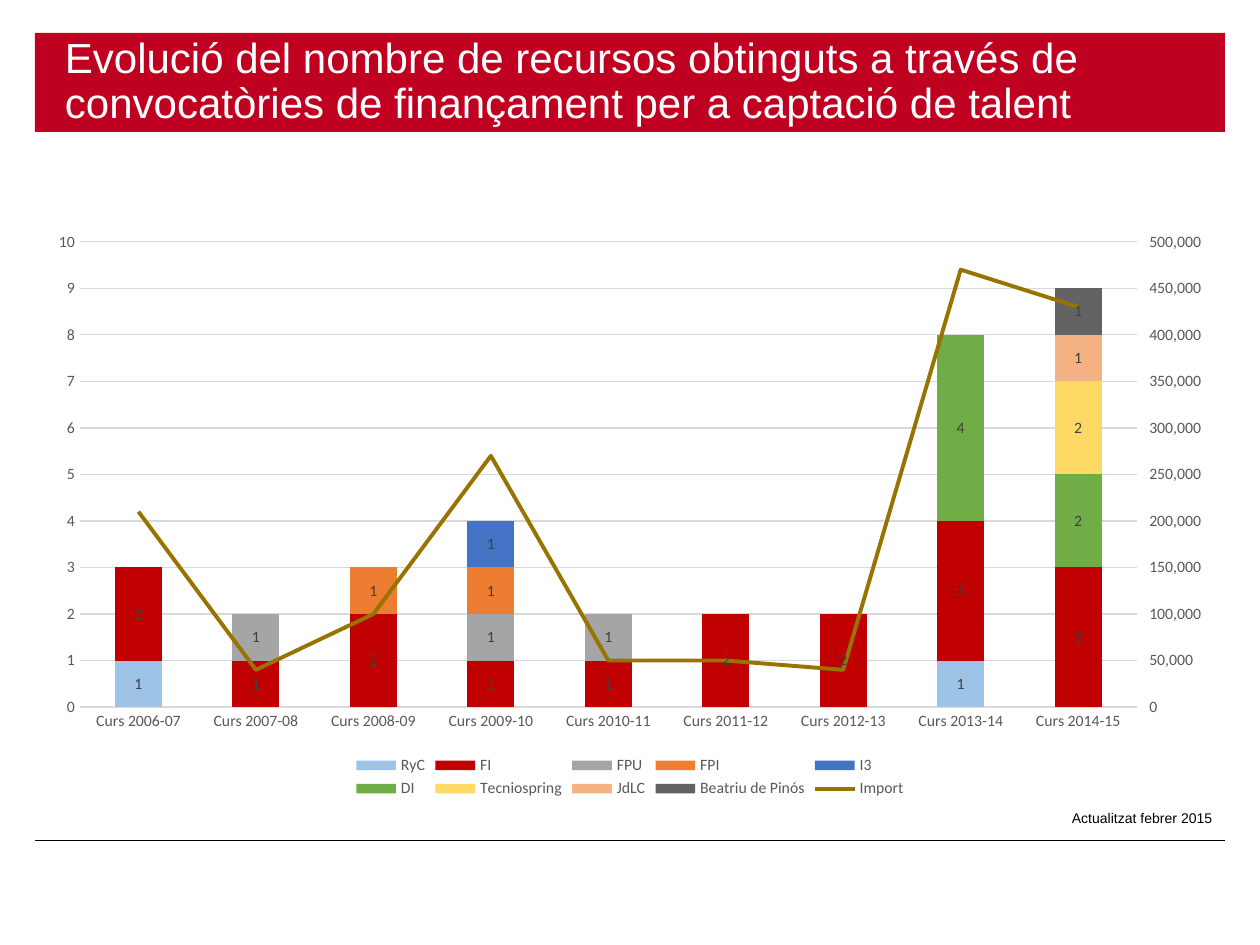
from copy import deepcopy

from pptx import Presentation
from pptx.chart.axis import CategoryAxis, ValueAxis
from pptx.chart.data import CategoryChartData
from pptx.dml.color import RGBColor
from pptx.enum.chart import XL_CHART_TYPE as ChartType
from pptx.enum.chart import XL_LEGEND_POSITION as LegendPosition
from pptx.enum.chart import XL_MARKER_STYLE as MarkerStyle
from pptx.enum.chart import XL_TICK_MARK as TickMark
from pptx.enum.shapes import MSO_CONNECTOR as Connector
from pptx.enum.shapes import MSO_SHAPE as Shape
from pptx.enum.text import MSO_ANCHOR as Anchor
from pptx.enum.text import PP_ALIGN as Align
from pptx.oxml import parse_xml
from pptx.oxml.ns import nsdecls, qn
from pptx.util import Pt

PX = 914400 // 126

BLACK = RGBColor(0x00, 0x00, 0x00)
WHITE = RGBColor(0xFF, 0xFF, 0xFF)
RED = RGBColor(0xC0, 0x00, 0x21)
AXIS_GREY = RGBColor(0x59, 0x59, 0x59)
LABEL_GREY = RGBColor(0x40, 0x40, 0x40)
GRID_GREY = RGBColor(0xD9, 0xD9, 0xD9)
OCHRE = RGBColor(0x99, 0x73, 0x00)

TITLE = ("Evolució del nombre de recursos obtinguts a través de "
         "convocatòries de finançament per a captació de talent")
UPDATED = "Actualitzat febrer 2015"
LEFT, WIDTH = 35, 1190

FIRST_YEAR, LAST_YEAR = 2006, 2014
COURSES = [f"Curs {year}-{(year + 1) % 100:02}"
           for year in range(FIRST_YEAR, LAST_YEAR + 1)]
# name, colour, grants by starting year
GRANTS = [
    ("RyC", RGBColor(0x9D, 0xC3, 0xE6), {2006: 1, 2013: 1}),
    ("FI", RGBColor(0xC0, 0x00, 0x00),
     {2006: 2, 2007: 1, 2008: 2, 2009: 1, 2010: 1, 2011: 2, 2012: 2, 2013: 3, 2014: 3}),
    ("FPU", RGBColor(0xA5, 0xA5, 0xA5), {2007: 1, 2009: 1, 2010: 1}),
    ("FPI", RGBColor(0xED, 0x7D, 0x31), {2008: 1, 2009: 1}),
    ("I3", RGBColor(0x44, 0x72, 0xC4), {2009: 1}),
    ("DI", RGBColor(0x70, 0xAD, 0x47), {2013: 4, 2014: 2}),
    ("Tecniospring", RGBColor(0xFF, 0xD9, 0x66), {2014: 2}),
    ("JdLC", RGBColor(0xF4, 0xB1, 0x83), {2014: 1}),
    ("Beatriu de Pinós", RGBColor(0x63, 0x63, 0x63), {2014: 1}),
]
AMOUNTS = [210000, 40000, 100000, 270000, 50000, 50000, 40000, 470000, 430000]


def place(*lengths):
    return [length * PX for length in lengths]


def style_font(font, name, size, color):
    font.name, font.size = name, Pt(size)
    font.color.rgb = color


def style_axis(axis, tick_mark=TickMark.NONE):
    axis.major_tick_mark = tick_mark
    axis.minor_tick_mark = TickMark.NONE
    style_font(axis.tick_labels.font, "Calibri", 9, AXIS_GREY)


def set_scale(axis, maximum, step, number_format):
    axis.minimum_scale, axis.maximum_scale, axis.major_unit = 0, maximum, step
    axis.tick_labels.number_format = number_format
    axis.tick_labels.number_format_is_linked = False


def move_last_series_to_line(chart):
    """Draw the last series as a line on a second value axis; return that axis."""
    bars = chart.plots[0]
    series = bars.series[len(GRANTS)]._element
    for bar_only in series.findall(qn("c:invertIfNegative")):
        series.remove(bar_only)
    line_plot = parse_xml(
        f'<c:lineChart {nsdecls("c")}><c:grouping val="standard"/><c:varyColors val="0"/>'
        '<c:marker val="1"/><c:axId val="501"/><c:axId val="502"/></c:lineChart>')
    line_plot.insert(2, series)
    bars._element.addnext(line_plot)

    left_axis = chart.value_axis._element
    categories = deepcopy(chart.category_axis._element)
    amounts = deepcopy(left_axis)
    left_axis.addnext(amounts)
    amounts.addnext(categories)
    for axis, own_id, cross_id in ((categories, "501", "502"), (amounts, "502", "501")):
        axis.find(qn("c:axId")).set("val", own_id)
        axis.find(qn("c:crossAx")).set("val", cross_id)
    amounts.find(qn("c:axPos")).set("val", "r")
    amounts.find(qn("c:crosses")).set("val", "max")
    CategoryAxis(categories).visible = False
    right_axis = ValueAxis(amounts)
    right_axis.has_major_gridlines = False
    return right_axis


def add_grants_chart(page):
    data = CategoryChartData()
    data.categories = COURSES
    for name, _, counts in GRANTS:
        data.add_series(name, [counts.get(year) for year in range(FIRST_YEAR, LAST_YEAR + 1)])
    data.add_series("Import", AMOUNTS)
    chart = page.shapes.add_chart(
        ChartType.COLUMN_STACKED, *place(LEFT, 221, WIDTH, 582), data).chart
    style_font(chart.font, "Calibri", 10, BLACK)
    chart.has_title = False
    chart.has_legend = True
    chart.legend.position = LegendPosition.BOTTOM
    chart.legend.include_in_layout = False
    style_font(chart.legend.font, "Calibri", 9, AXIS_GREY)

    style_axis(chart.category_axis)
    course_line = chart.category_axis.format.line
    course_line.color.rgb, course_line.width = GRID_GREY, Pt(0.75)
    counts_axis = chart.value_axis
    style_axis(counts_axis)
    counts_axis.format.line.fill.background()
    grid = counts_axis.major_gridlines.format.line
    grid.color.rgb, grid.width = GRID_GREY, Pt(0.75)

    amounts_axis = move_last_series_to_line(chart)
    style_axis(amounts_axis, TickMark.OUTSIDE)
    set_scale(counts_axis, 10, 1, "General")
    set_scale(amounts_axis, 500000, 50000, "#,##0")

    bars, lines = chart.plots
    bars.gap_width, bars.overlap = 150, 100
    bars.vary_by_categories = False
    for series, (_, color, _) in zip(bars.series, GRANTS):
        series.format.fill.solid()
        series.format.fill.fore_color.rgb = color
        series.data_labels.show_value = True
        style_font(series.data_labels.font, "Calibri", 9, LABEL_GREY)
    amounts = lines.series[0]
    amounts.smooth = False
    amounts.marker.style = MarkerStyle.NONE
    amounts.format.line.color.rgb, amounts.format.line.width = OCHRE, Pt(2.25)


def add_footer_line(page):
    line = page.shapes.add_connector(
        Connector.STRAIGHT, *place(LEFT, 840, LEFT + WIDTH, 840))
    line.line.color.rgb, line.line.width = BLACK, Pt(0.5)
    line._element.spPr.append(parse_xml(f'<a:effectLst {nsdecls("a")}/>'))


def add_title(page):
    banner = page.shapes.add_shape(Shape.RECTANGLE, *place(LEFT, 33, WIDTH, 99))
    banner.shadow.inherit = False
    banner.fill.solid()
    banner.fill.fore_color.rgb = RED
    banner.line.fill.background()
    frame = banner.text_frame
    frame.word_wrap = True
    frame.vertical_anchor = Anchor.MIDDLE
    frame.margin_left = 30 * PX
    frame.text = TITLE
    para = frame.paragraphs[0]
    para.alignment, para.line_spacing = Align.LEFT, 0.9
    style_font(para.runs[0].font, "Arial", 24, WHITE)


def add_update_note(page):
    box = page.shapes.add_textbox(*place(1047, 803, 178, 30))
    box.text_frame.word_wrap = True
    box.text_frame.text = UPDATED
    para = box.text_frame.paragraphs[0]
    para.alignment = Align.RIGHT
    style_font(para.runs[0].font, "Arial", 8, BLACK)


def main():
    deck = Presentation()
    deck.slide_width, deck.slide_height = place(1260, 945)
    page = deck.slides.add_slide(deck.slide_layouts[6])
    add_footer_line(page)
    add_title(page)
    add_update_note(page)
    add_grants_chart(page)
    deck.save("out.pptx")


if __name__ == "__main__":
    main()
